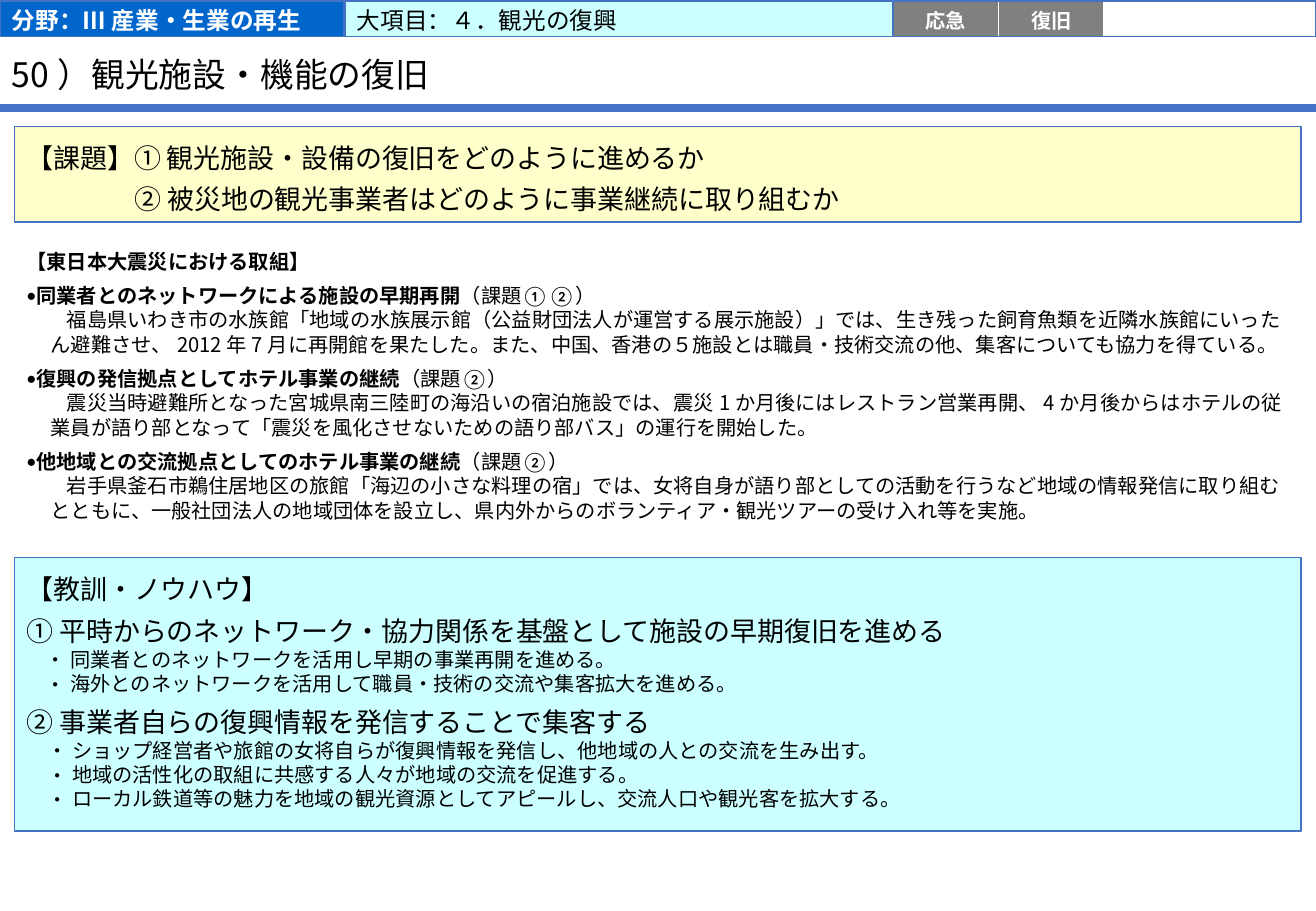
from lxml.etree import SubElement
from pptx import Presentation
from pptx.dml.color import RGBColor
from pptx.enum.shapes import MSO_CONNECTOR, MSO_SHAPE
from pptx.enum.text import MSO_ANCHOR, PP_ALIGN
from pptx.oxml.ns import qn
from pptx.util import Pt

BLACK = RGBColor(0x00, 0x00, 0x00)
WHITE = RGBColor(0xFF, 0xFF, 0xFF)
GRAY = RGBColor(0x80, 0x80, 0x80)
BLUE = RGBColor(0x44, 0x72, 0xC4)
DEEP_BLUE = RGBColor(0x00, 0x66, 0xCC)
PALE_CYAN = RGBColor(0xCC, 0xFF, 0xFF)
PALE_YELLOW = RGBColor(0xFF, 0xFF, 0xCC)
LATIN, GOTHIC = "Calibri", "Noto Sans CJK JP"

# Content
FIELD = "分野：Ⅲ 産業・生業の再生"
CATEGORY = "大項目：４．観光の復興"
PHASES = ["応急", "復旧", "", ""]
TITLE = "50）観光施設・機能の復旧"
ISSUES = [
    "【課題】① 観光施設・設備の復旧をどのように進めるか",
    "② 被災地の観光事業者はどのように事業継続に取り組むか",
]
EFFORTS_HEADING = "【東日本大震災における取組】"
EFFORTS = [
    ("同業者とのネットワークによる施設の早期再開", "（課題①②）",
     "福島県いわき市の水族館「地域の水族展示館（公益財団法人が運営する展示施設）」では、"
     "生き残った飼育魚類を近隣水族館にいったん避難させ、2012年7月に再開館を果たした。"
     "また、中国、香港の５施設とは職員・技術交流の他、集客についても協力を得ている。"),
    ("復興の発信拠点としてホテル事業の継続", "（課題②）",
     "震災当時避難所となった宮城県南三陸町の海沿いの宿泊施設では、"
     "震災1か月後にはレストラン営業再開、4か月後からはホテルの従業員が語り部となって"
     "「震災を風化させないための語り部バス」の運行を開始した。"),
    ("他地域との交流拠点としてのホテル事業の継続", "（課題②）",
     "岩手県釜石市鵜住居地区の旅館「海辺の小さな料理の宿」では、"
     "女将自身が語り部としての活動を行うなど地域の情報発信に取り組むとともに、"
     "一般社団法人の地域団体を設立し、県内外からのボランティア・観光ツアーの受け入れ等を実施。"),
]
LESSONS_HEADING = "【教訓・ノウハウ】"
LESSONS = [
    ("① 平時からのネットワーク・協力関係を基盤として施設の早期復旧を進める", 26, [
        "同業者とのネットワークを活用し早期の事業再開を進める。",
        "海外とのネットワークを活用して職員・技術の交流や集客拡大を進める。"]),
    ("② 事業者自らの復興情報を発信することで集客する", 27, [
        "ショップ経営者や旅館の女将自らが復興情報を発信し、他地域の人との交流を生み出す。",
        "地域の活性化の取組に共感する人々が地域の交流を促進する。",
        "ローカル鉄道等の魅力を地域の観光資源としてアピールし、交流人口や観光客を拡大する。"]),
]

# Layout in points
SLIDE_WIDTH, SLIDE_HEIGHT = 780, 540
HEADER_TOP, HEADER_HEIGHT = 0.7, 20.9
PHASE_LEFT, PHASE_WIDTH = 529.2, 62.7
PANEL_LEFT, PANEL_WIDTH = 8.6, 762.5
HEADER_INSETS = (7.2, 1.4, 7.2, 0)

presentation = Presentation()
presentation.slide_width, presentation.slide_height = Pt(SLIDE_WIDTH), Pt(SLIDE_HEIGHT)
slide = presentation.slides.add_slide(presentation.slide_layouts[6])


def set_frame(shape, insets, anchor):
    frame = shape.text_frame
    frame.word_wrap = True
    frame.vertical_anchor = anchor
    frame.margin_left, frame.margin_top, frame.margin_right, frame.margin_bottom = map(Pt, insets)
    return frame


def add_box(left, top, width, height, fill, line, insets=(7.2, 3.6, 7.2, 3.6),
            anchor=MSO_ANCHOR.MIDDLE):
    shape = slide.shapes.add_shape(MSO_SHAPE.RECTANGLE, Pt(left), Pt(top), Pt(width), Pt(height))
    shape.shadow.inherit = False
    if fill is None:
        shape.fill.background()
    else:
        shape.fill.solid()
        shape.fill.fore_color.rgb = fill
    if line is None:
        shape.line.fill.background()
    else:
        shape.line.color.rgb = line
        shape.line.width = Pt(1)
    return set_frame(shape, insets, anchor)


def add_paragraph(frame, runs, size, font, color=BLACK, before=0, left=0, indent=0,
                  bullet=None, spacing=None, align=PP_ALIGN.LEFT):
    """Add one paragraph; runs is a list of (text, bold)."""
    first = frame.paragraphs[0]
    paragraph = frame.add_paragraph() if first.runs else first
    properties = paragraph._p.get_or_add_pPr()
    properties.set("marL", str(Pt(left)))
    properties.set("indent", str(Pt(indent)))
    if bullet:
        SubElement(properties, qn("a:buFont")).set("typeface", font)
        SubElement(properties, qn("a:buChar")).set("char", bullet)
    paragraph.alignment = align
    paragraph.space_before = Pt(before)
    if spacing:
        paragraph.line_spacing = spacing
    for text, bold in runs:
        run = paragraph.add_run()
        run.text = text
        run.font.size = Pt(size)
        run.font.bold = bold
        run.font.color.rgb = color
        run.font.name = font
        SubElement(run._r.get_or_add_rPr(), qn("a:ea")).set("typeface", font)


# Rule under the title
rule = slide.shapes.add_connector(MSO_CONNECTOR.STRAIGHT, 0, Pt(64), Pt(SLIDE_WIDTH), Pt(64))
rule.line.color.rgb = BLUE
rule.line.width = Pt(4.5)
SubElement(rule._element.spPr, qn("a:effectLst"))

# Efforts
efforts = add_box(PANEL_LEFT, 136.8, PANEL_WIDTH, 183.6, WHITE, None)
add_paragraph(efforts, [(EFFORTS_HEADING, True)], 12, LATIN)
for heading, issue, detail in EFFORTS:
    add_paragraph(efforts, [(heading, True), (issue, False)], 12, LATIN,
                  before=6, left=5, indent=-5, bullet="•")
    add_paragraph(efforts, [(detail, False)], 12, GOTHIC, left=14.4, indent=9.6)

# Title
title_box = slide.shapes.add_textbox(0, Pt(23), Pt(682.6), Pt(41.8))
title = set_frame(title_box, (7.2, 2.9, 7.2, 0), MSO_ANCHOR.MIDDLE)
add_paragraph(title, [(TITLE, False)], 20, GOTHIC, spacing=0.9)

# Header strip
field = add_box(0, HEADER_TOP, 203.8, HEADER_HEIGHT, DEEP_BLUE, BLUE, HEADER_INSETS)
add_paragraph(field, [(FIELD, True)], 14, LATIN, WHITE)
category = add_box(204.5, HEADER_TOP, 326.2, HEADER_HEIGHT, PALE_CYAN, BLUE, HEADER_INSETS)
add_paragraph(category, [(CATEGORY, False)], 14, LATIN)

# Issues
issues = add_box(PANEL_LEFT, 74.9, PANEL_WIDTH, 56.9, PALE_YELLOW, BLUE, (7.2, 8.6, 7.2, 8.6))
for issue, left in zip(ISSUES, (0, 64)):
    add_paragraph(issues, [(issue, False)], 16, GOTHIC, left=left, spacing=Pt(24))

# Lessons
lessons = add_box(PANEL_LEFT, 330.5, PANEL_WIDTH, 162, PALE_CYAN, BLUE,
                  (7.2, 8.6, 7.2, 0), MSO_ANCHOR.TOP)
add_paragraph(lessons, [(LESSONS_HEADING, False)], 16, GOTHIC)
for lesson, text_left, points in LESSONS:
    add_paragraph(lessons, [(lesson, False)], 16, GOTHIC, before=6)
    for point in points:
        add_paragraph(lessons, [(point, False)], 12, GOTHIC,
                      left=text_left, indent=-14.5, bullet="・")

# Phase cells and their frame
for index, phase in enumerate(PHASES):
    cell = add_box(PHASE_LEFT + index * PHASE_WIDTH, HEADER_TOP, PHASE_WIDTH, HEADER_HEIGHT,
                   GRAY if phase else WHITE, WHITE, (0, 1.4, 0, 0))
    if phase:
        add_paragraph(cell, [(phase, True)], 12, LATIN, WHITE, align=PP_ALIGN.CENTER)
add_box(PHASE_LEFT, HEADER_TOP, PHASE_WIDTH * len(PHASES), HEADER_HEIGHT, None, BLUE)

presentation.save("out.pptx")
